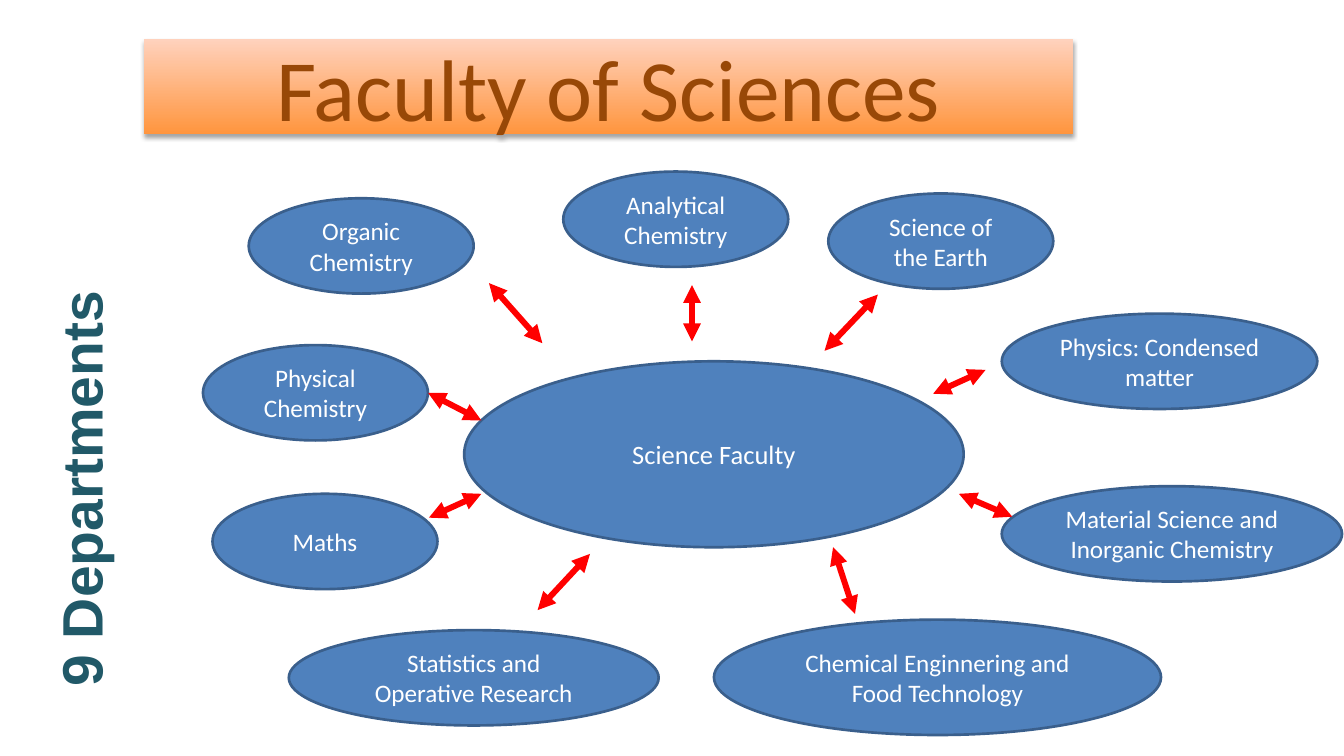
from lxml import etree
from pptx import Presentation
from pptx import util as u
from pptx.dml.color import RGBColor
from pptx.enum import shapes, text
from pptx.oxml import ns

PX = 9144  # 100 px to the inch

FACULTY = ("Science Faculty", 487, 379, 524, 195)
DEPARTMENTS = [
    ("Science of the Earth", 869, 203, 236, 100),
    ("Physics: Condensed matter", 1051, 329, 331, 100),
    ("Organic Chemistry", 261, 208, 236, 100),
    ("Statistics and Operative Research", 303, 661, 388, 100),
    ("Chemical Enginnering and Food Technology", 749, 650, 469, 121),
    ("Material Science and Inorganic Chemistry", 1051, 510, 357, 100),
    ("Physical Chemistry", 213, 362, 236, 100),
    ("Maths", 223, 518, 236, 100),
    ("Analytical Chemistry", 591, 180, 236, 100),
]
LINKS = [
    (726, 299, 726, 358),
    (921, 309, 865, 368),
    (619, 581, 564, 640),
    (874, 574, 897, 644),
    (1062, 542, 1006, 518),
    (569, 360, 513, 297),
    (505, 441, 449, 412),
    (505, 518, 450, 543),
    (1034, 388, 979, 413),
]


def px(*lengths):
    return [u.Emu(length * PX) for length in lengths]


def rgb(color):
    return RGBColor.from_string(color)


def add_element(parent, tag, **attributes):
    return etree.SubElement(parent, ns.qn(tag), attributes)


def write(frame, words, size, font, color, align, bold=False):
    frame.text = words
    paragraph = frame.paragraphs[0]
    paragraph.alignment = align
    run_font = paragraph.runs[0].font
    run_font.size = u.Pt(size)
    run_font.name = font
    run_font.bold = bold
    run_font.color.rgb = rgb(color)


def set_insets(frame):
    frame.margin_left, frame.margin_right = px(12, 12)
    frame.margin_top, frame.margin_bottom = px(6, 6)


def add_title(slide, words):
    title = slide.shapes.title
    title.left, title.top, title.width, title.height = px(151, 41, 975, 100)
    outline = etree.Element(ns.qn("a:prstGeom"), prst="roundRect")
    add_element(outline, "a:avLst")
    properties = title._element.spPr
    properties.insert(1, outline)

    title.fill.gradient()
    title.fill.gradient_angle = 90
    for stop, color in zip(title.fill.gradient_stops, ("FF953E", "FFD2BD")):
        stop.color.rgb = rgb(color)

    title.shadow.inherit = False
    shadow = add_element(properties.find(ns.qn("a:effectLst")), "a:outerShdw",
                         blurRad=str(u.Pt(3.1)), dist=str(u.Pt(1.8)),
                         dir="5400000", rotWithShape="0")
    black = add_element(shadow, "a:srgbClr", val="000000")
    add_element(black, "a:alpha", val="35000")

    frame = title.text_frame
    frame.auto_size = text.MSO_AUTO_SIZE.NONE
    frame.vertical_anchor = text.MSO_ANCHOR.MIDDLE
    write(frame, words, 66, "Calibri", "984807", text.PP_ALIGN.CENTER)


def add_ellipse(slide, words, left, top, width, height, size=19):
    ellipse = slide.shapes.add_shape(shapes.MSO_SHAPE.OVAL,
                                     *px(left, top, width, height))
    ellipse.shadow.inherit = False
    ellipse.fill.solid()
    ellipse.fill.fore_color.rgb = rgb("4F81BD")
    ellipse.line.color.rgb = rgb("3A5F8C")
    ellipse.line.width = u.Pt(2)
    frame = ellipse.text_frame
    frame.word_wrap = True
    frame.vertical_anchor = text.MSO_ANCHOR.MIDDLE
    set_insets(frame)
    write(frame, words, size, "Calibri", "FFFFFF", text.PP_ALIGN.CENTER)


def add_double_arrow(slide, *ends):
    arrow = slide.shapes.add_connector(shapes.MSO_CONNECTOR.STRAIGHT, *px(*ends))
    arrow.line.color.rgb = rgb("FF0000")
    arrow.line.width = u.Pt(4.5)
    line = arrow.line._get_or_add_ln()
    add_element(line, "a:headEnd", type="triangle")
    add_element(line, "a:tailEnd", type="triangle")
    add_element(arrow._element.spPr, "a:effectLst")


def add_side_label(slide, words):
    label = slide.shapes.add_textbox(*px(-137, 468, 443, 85))
    label.rotation = 270
    frame = label.text_frame
    frame.word_wrap = False
    frame.auto_size = text.MSO_AUTO_SIZE.SHAPE_TO_FIT_TEXT
    set_insets(frame)
    write(frame, words, 43, "Arial", "215968", text.PP_ALIGN.LEFT, bold=True)


def main():
    deck = Presentation()
    deck.slide_width, deck.slide_height = px(1410, 793)
    slide = deck.slides.add_slide(deck.slide_layouts.get_by_name("Title Only"))

    add_title(slide, "Faculty of Sciences")
    add_ellipse(slide, *FACULTY, size=20)
    for department in DEPARTMENTS:
        add_ellipse(slide, *department)
    for link in LINKS:
        add_double_arrow(slide, *link)
    add_side_label(slide, "9 Departments")

    deck.save("out.pptx")


if __name__ == "__main__":
    main()
